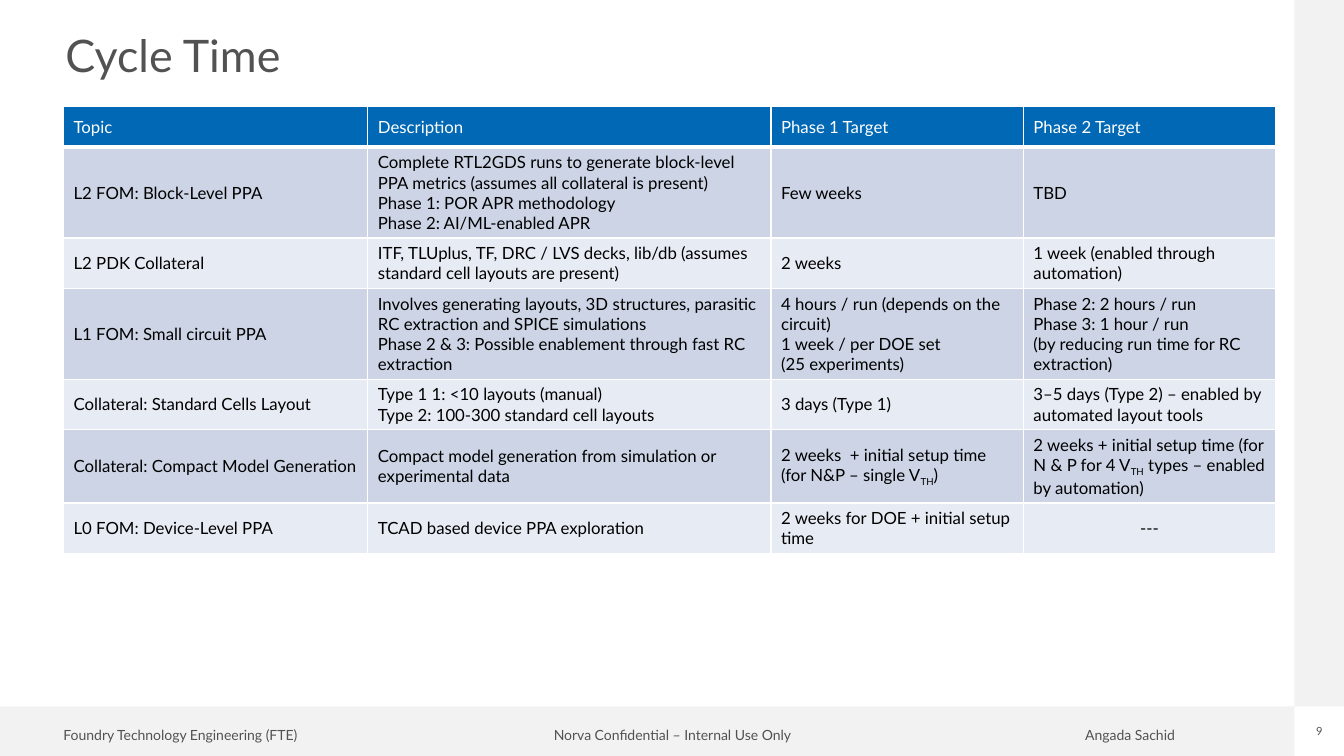
import pptx
import pptx.dml.color
import pptx.enum.shapes
import pptx.enum.text
import pptx.oxml
import pptx.oxml.ns
import pptx.util

Cm = pptx.util.Cm
Pt = pptx.util.Pt
ALIGN = pptx.enum.text.PP_ALIGN
ANCHOR = pptx.enum.text.MSO_ANCHOR

FONT = "Lato"
COLORS = {
    "band": "F2F2F2",
    "muted": "525252",
    "header": "0068B5",
    "odd": "CCD4E5",
    "even": "E7EBF3",
    "black": "000000",
    "white": "FFFFFF",
}
COLUMN_WIDTHS = [7.67, 10.16, 6.36, 6.36]
ROW_HEIGHTS = [1.04, 2.27, 1.27, 2.27, 1.27, 1.84, 1.27]
SUBSCRIPT_MARK = "|"
ROWS = [
    ["Topic", "Description", "Phase 1 Target", "Phase 2 Target"],
    [
        "L2 FOM: Block-Level PPA",
        "Complete RTL2GDS runs to generate block-level PPA metrics (assumes all collateral is present)\n"
        "Phase 1: POR APR methodology\nPhase 2: AI/ML-enabled APR",
        "Few weeks",
        "TBD",
    ],
    [
        "L2 PDK Collateral",
        "ITF, TLUplus, TF, DRC / LVS decks, lib/db (assumes standard cell layouts are present)",
        "2 weeks",
        "1 week (enabled through automation)",
    ],
    [
        "L1 FOM: Small circuit PPA",
        "Involves generating layouts, 3D structures, parasitic RC extraction and SPICE simulations\n"
        "Phase 2 & 3: Possible enablement through fast RC extraction",
        "4 hours / run (depends on the circuit)\n1 week / per DOE set\n(25 experiments)",
        "Phase 2: 2 hours / run\nPhase 3: 1 hour / run\n(by reducing run time for RC extraction)",
    ],
    [
        "Collateral: Standard Cells Layout",
        "Type 1 1: <10 layouts (manual)\nType 2: 100-300 standard cell layouts",
        "3 days (Type 1)",
        "3–5 days (Type 2) – enabled by automated layout tools",
    ],
    [
        "Collateral: Compact Model Generation",
        "Compact model generation from simulation or experimental data",
        "2 weeks  + initial setup time (for N&P – single V|TH|)",
        "2 weeks + initial setup time (for N & P for 4 V|TH| types – enabled by automation)",
    ],
    [
        "L0 FOM: Device-Level PPA",
        "TCAD based device PPA exploration",
        "2 weeks for DOE + initial setup time",
        "---",
    ],
]


def rgb(name):
    return pptx.dml.color.RGBColor.from_string(COLORS[name])


def style_font(font, size, color):
    font.name = FONT
    font.size = Pt(size)
    font.bold = False
    font.color.rgb = rgb(color)


def add_label(slide, text, box, size, align=ALIGN.LEFT, wrap=False, inset=True, anchor=ANCHOR.TOP):
    frame = slide.shapes.add_textbox(*map(Cm, box)).text_frame
    frame.text = text
    frame.word_wrap = wrap
    frame.vertical_anchor = anchor
    if not inset:
        frame.margin_left = frame.margin_right = frame.margin_top = frame.margin_bottom = 0
    line = frame.paragraphs[0]
    line.alignment = align
    line.line_spacing = 0.9
    style_font(line.runs[0].font, size, color="muted")


def add_bands(slide, box):
    left, top, width, height = box
    edge = 1.25
    bottom_band = (left, top + height - edge, width - edge, edge)
    side_band = (left + width - edge, top, edge, height - edge)
    for band_box in (bottom_band, side_band):
        band = slide.shapes.add_shape(pptx.enum.shapes.MSO_SHAPE.RECTANGLE, *map(Cm, band_box))
        band.shadow.inherit = False
        band.fill.solid()
        band.fill.fore_color.rgb = rgb("band")
        band.line.fill.background()


def add_footer(slide, box):
    left, top, width, height = box
    add_label(slide, "Norva Confidential – Internal Use Only",
              (left + 12.27, top, 6.65, height), 10, ALIGN.CENTER)
    add_label(slide, "Foundry Technology Engineering (FTE)", (left, top, 6.99, height), 10)
    add_label(slide, "Angada Sachid", (left + 25.75, top, 2.92, height), 10)
    add_label(slide, "9", (left + width - 0.36, top + 0.05, 0.36, 0.33), 8, ALIGN.CENTER, inset=False)


def add_borders(cell, bottom_width):
    properties = cell._tc.get_or_add_tcPr()
    widths = {"lnL": 1, "lnR": 1, "lnT": 1, "lnB": bottom_width}
    for position, (side, width) in enumerate(widths.items()):
        border = pptx.oxml.parse_xml(
            f'<a:{side} {pptx.oxml.ns.nsdecls("a")} w="{Pt(width)}">'
            f'<a:solidFill><a:srgbClr val="{COLORS["white"]}"/></a:solidFill></a:{side}>'
        )
        properties.insert(position, border)


def fill_cell(cell, text, is_header, fill):
    cell.vertical_anchor = ANCHOR.MIDDLE
    cell.fill.solid()
    cell.fill.fore_color.rgb = rgb(fill)
    add_borders(cell, 3 if is_header else 1)
    cell.text_frame.text = text.replace(SUBSCRIPT_MARK, "") if SUBSCRIPT_MARK not in text else ""
    if SUBSCRIPT_MARK in text:
        for index, part in enumerate(text.split(SUBSCRIPT_MARK)):
            run = cell.text_frame.paragraphs[0].add_run()
            run.text = part
            if index % 2:
                run.font._element.set("baseline", "-25000")
    for line in cell.text_frame.paragraphs:
        line.alignment = ALIGN.CENTER if text == "---" else ALIGN.LEFT
        for run in line.runs:
            style_font(run.font, 12, "white" if is_header else "black")


def add_cycle_table(slide, box):
    table = slide.shapes.add_table(len(ROWS), len(COLUMN_WIDTHS), *map(Cm, box)).table
    for column, width in zip(table.columns, COLUMN_WIDTHS):
        column.width = Cm(width)
    for index, (row, height, texts) in enumerate(zip(table.rows, ROW_HEIGHTS, ROWS)):
        row.height = Cm(height)
        fill = "header" if index == 0 else "odd" if index % 2 else "even"
        for cell, text in zip(row.cells, texts):
            fill_cell(cell, text, index == 0, fill)


def main():
    deck = pptx.Presentation()
    deck.slide_width = Cm(33.87)
    deck.slide_height = Cm(19.05)
    slide = deck.slides.add_slide(deck.slide_layouts[6])
    add_bands(slide, (0, 0, 33.87, 19.05))
    add_footer(slide, (1.35, 18.24, 32.08, 0.64))
    add_label(slide, "Cycle Time", (1.65, 0.64, 30.58, 1.65), 32,
              wrap=True, inset=False, anchor=ANCHOR.MIDDLE)
    add_cycle_table(slide, (1.6, 2.67, sum(COLUMN_WIDTHS), sum(ROW_HEIGHTS)))
    deck.save("out.pptx")


if __name__ == "__main__":
    main()
